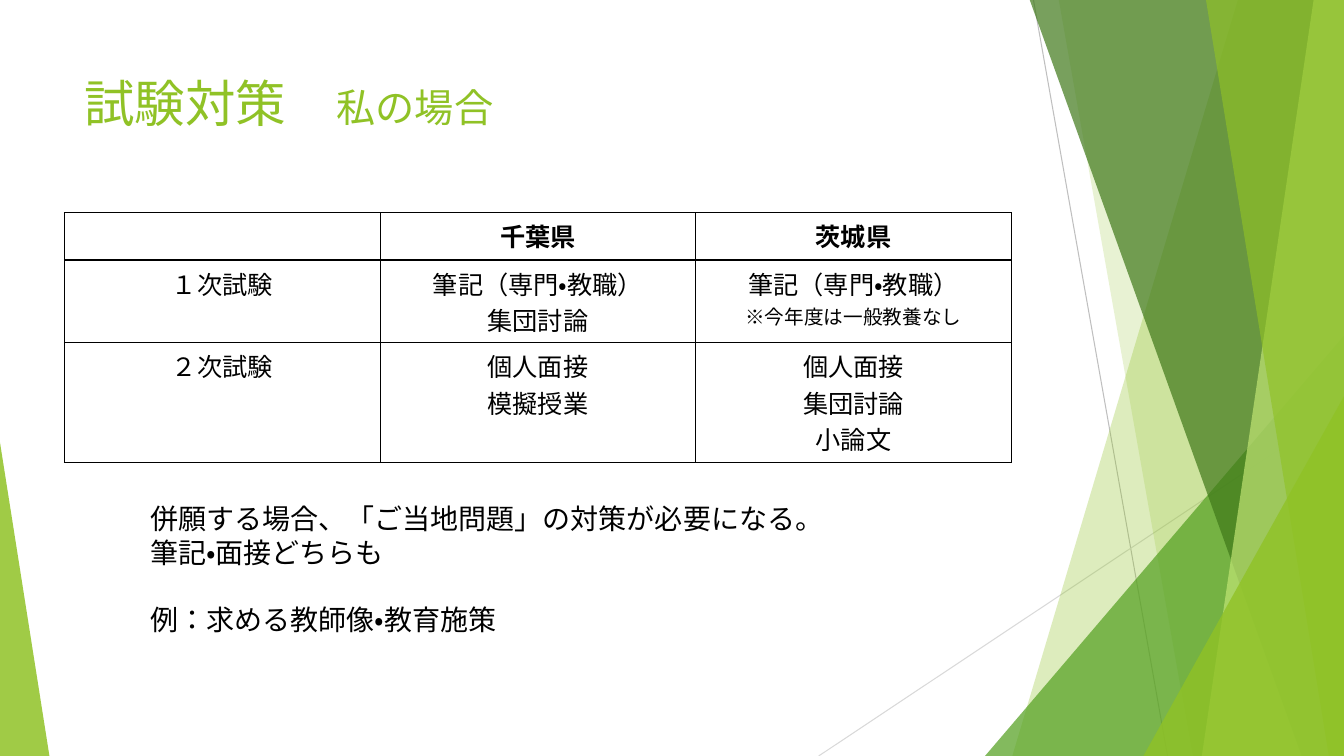
from dataclasses import dataclass
from typing import Optional, Union

from lxml import etree
from pptx import Presentation
from pptx import util as u
from pptx.dml import color
from pptx.enum import lang, shapes, text
from pptx.oxml import ns


@dataclass(frozen=True)
class Theme:
    font: str = "Cabin"
    lime: str = "90C226"
    green: str = "54A021"
    forest: str = "3F7819"
    pale: str = "C0E474"
    ink: str = "000000"
    gray: str = "BFBFBF"
    light_gray: str = "D9D9D9"
    title: int = 36
    subtitle: int = 28
    body: int = 20
    table: int = 18
    note: int = 14
    body_pitch: int = 24


THEME = Theme()
WIDTH, HEIGHT, TOP = 13.33, 7.5, -0.01


@dataclass(frozen=True)
class Ray:
    x1: float
    y1: float
    x2: float
    color: str


@dataclass(frozen=True)
class Band:
    top_x: float
    bottom_x: float
    color: str
    opacity: int


@dataclass(frozen=True)
class Wedge:
    left: float
    top: float
    width: float
    apex: float
    color: str
    opacity: int


@dataclass(frozen=True)
class Words:
    text: str
    size: int
    color: str = THEME.ink
    bold: bool = False


RAYS = [
    Ray(10.25, 0, 11.58, THEME.gray),
    Ray(WIDTH, 4.03, 8.12, THEME.light_gray),
]
FACETS: list[Union[Band, Wedge]] = [
    Band(12.28, 10.04, THEME.lime, 30),
    Band(10.5, 11.83, THEME.lime, 20),
    Wedge(9.77, 3.33, 3.56, 1, THEME.green, 72),
    Band(10.21, 12.91, THEME.forest, 70),
    Band(13.03, 11.92, THEME.pale, 70),
    Band(11.96, 13.18, THEME.lime, 65),
    Wedge(11.34, 3.93, 1.99, 1, THEME.lime, 80),
    Wedge(0, 4.39, 0.49, 0, THEME.lime, 85),
]
EXAMS = [
    ["", "千葉県", "茨城県"],
    ["１次試験", "筆記（専門・教職）\n集団討論", "筆記（専門・教職）\n※今年度は一般教養なし"],
    ["２次試験", "個人面接\n模擬授業", "個人面接\n集団討論\n小論文"],
]
ROW_HEIGHTS = [0.47, 0.82, 1.19]
COLUMN_WIDTH = 3.13
ADVICE = [
    "併願する場合、「ご当地問題」の対策が必要になる。",
    "筆記・面接どちらも",
    "例：求める教師像・教育施策",
]


def add_words(p, words: Words) -> None:
    r = p.add_run()
    r.text = words.text
    r.font.name = THEME.font
    r.font.size = u.Pt(words.size)
    r.font.bold = words.bold
    r.font.language_id = lang.MSO_LANGUAGE_ID.JAPANESE
    r.font.color.rgb = color.RGBColor.from_string(words.color)


def paragraph(tf, index: int):
    return tf.add_paragraph() if index else tf.paragraphs[0]


def add_ray(s, ray: Ray) -> None:
    line = s.shapes.add_connector(
        shapes.MSO_CONNECTOR.STRAIGHT,
        u.Inches(ray.x1), u.Inches(ray.y1), u.Inches(ray.x2), u.Inches(HEIGHT),
    )
    line.line.color.rgb = color.RGBColor.from_string(ray.color)
    line.line.width = u.Pt(0.75)
    etree.SubElement(line._element.spPr, ns.qn("a:effectLst"))


def add_facet(s, facet: Union[Band, Wedge]) -> None:
    if isinstance(facet, Band):
        outline = s.shapes.build_freeform(
            u.Inches(facet.top_x), u.Inches(TOP)
        )
        corners = [(WIDTH, TOP), (WIDTH, HEIGHT), (facet.bottom_x, HEIGHT)]
        outline.add_line_segments([(u.Inches(x), u.Inches(y)) for x, y in corners])
        sp = outline.convert_to_shape()
    else:
        sp = s.shapes.add_shape(
            shapes.MSO_SHAPE.ISOSCELES_TRIANGLE,
            u.Inches(facet.left), u.Inches(facet.top),
            u.Inches(facet.width), u.Inches(HEIGHT - facet.top),
        )
        sp.adjustments[0] = facet.apex
    sp.shadow.inherit = False
    sp.line.fill.background()
    sp.fill.solid()
    sp.fill.fore_color.rgb = color.RGBColor.from_string(facet.color)
    tint = sp._element.spPr.find(ns.qn("a:solidFill"))[0]
    etree.SubElement(tint, ns.qn("a:alpha"), val=str(facet.opacity * 1000))


def add_text_frame(s, left: float, top: float, width: float, height: float, wrap: bool):
    box = s.shapes.add_textbox(
        u.Inches(left), u.Inches(top), u.Inches(width), u.Inches(height)
    )
    box.text_frame.word_wrap = wrap
    return box.text_frame


def add_borders(cell) -> None:
    props = cell._tc.get_or_add_tcPr()
    for side in ("lnL", "lnR", "lnT", "lnB"):
        ln = etree.SubElement(props, ns.qn(f"a:{side}"), w=str(u.Pt(1)))
        fill = etree.SubElement(ln, ns.qn("a:solidFill"))
        etree.SubElement(fill, ns.qn("a:srgbClr"), val=THEME.ink)


def fill_cell(cell, content: str, bold: bool) -> None:
    add_borders(cell)
    cell.fill.background()
    for i, line in enumerate(content.split("\n")):
        p = paragraph(cell.text_frame, i)
        p.alignment = text.PP_ALIGN.CENTER
        size = THEME.note if line.startswith("※") else THEME.table
        if line:
            add_words(p, Words(line, size, bold=bold))


def add_exam_table(s) -> None:
    columns = len(EXAMS[0])
    table = s.shapes.add_table(
        len(EXAMS), columns, u.Inches(0.64), u.Inches(2.11),
        u.Inches(COLUMN_WIDTH * columns), u.Inches(sum(ROW_HEIGHTS)),
    ).table
    table.first_row = table.horz_banding = False
    for column in table.columns:
        column.width = u.Inches(COLUMN_WIDTH)
    for i, (contents, height) in enumerate(zip(EXAMS, ROW_HEIGHTS)):
        table.rows[i].height = u.Inches(height)
        for j, content in enumerate(contents):
            fill_cell(table.cell(i, j), content, bold=i == 0)


def add_title(s) -> None:
    p = add_text_frame(s, 0.74, 0.67, 9.4, 1.44, wrap=True).paragraphs[0]
    add_words(p, Words("試験対策　", THEME.title, THEME.lime))
    add_words(p, Words("私の場合", THEME.subtitle, THEME.lime))


def add_advice(s) -> None:
    tf = add_text_frame(s, 1.39, 4.93, 6.93, 1.45, wrap=False)
    pitch: Optional[u.Length] = u.Pt(THEME.body_pitch)
    for i, line in enumerate(ADVICE):
        p = paragraph(tf, i)
        p.line_spacing = pitch
        add_words(p, Words(line, THEME.body))
    tf.paragraphs[-1].space_before = pitch


def main() -> None:
    prs = Presentation()
    prs.slide_width, prs.slide_height = u.Inches(WIDTH), u.Inches(HEIGHT)
    s = prs.slides.add_slide(prs.slide_layouts[6])
    for ray in RAYS:
        add_ray(s, ray)
    for facet in FACETS:
        add_facet(s, facet)
    add_title(s)
    add_exam_table(s)
    add_advice(s)
    prs.save("out.pptx")


if __name__ == "__main__":
    main()
